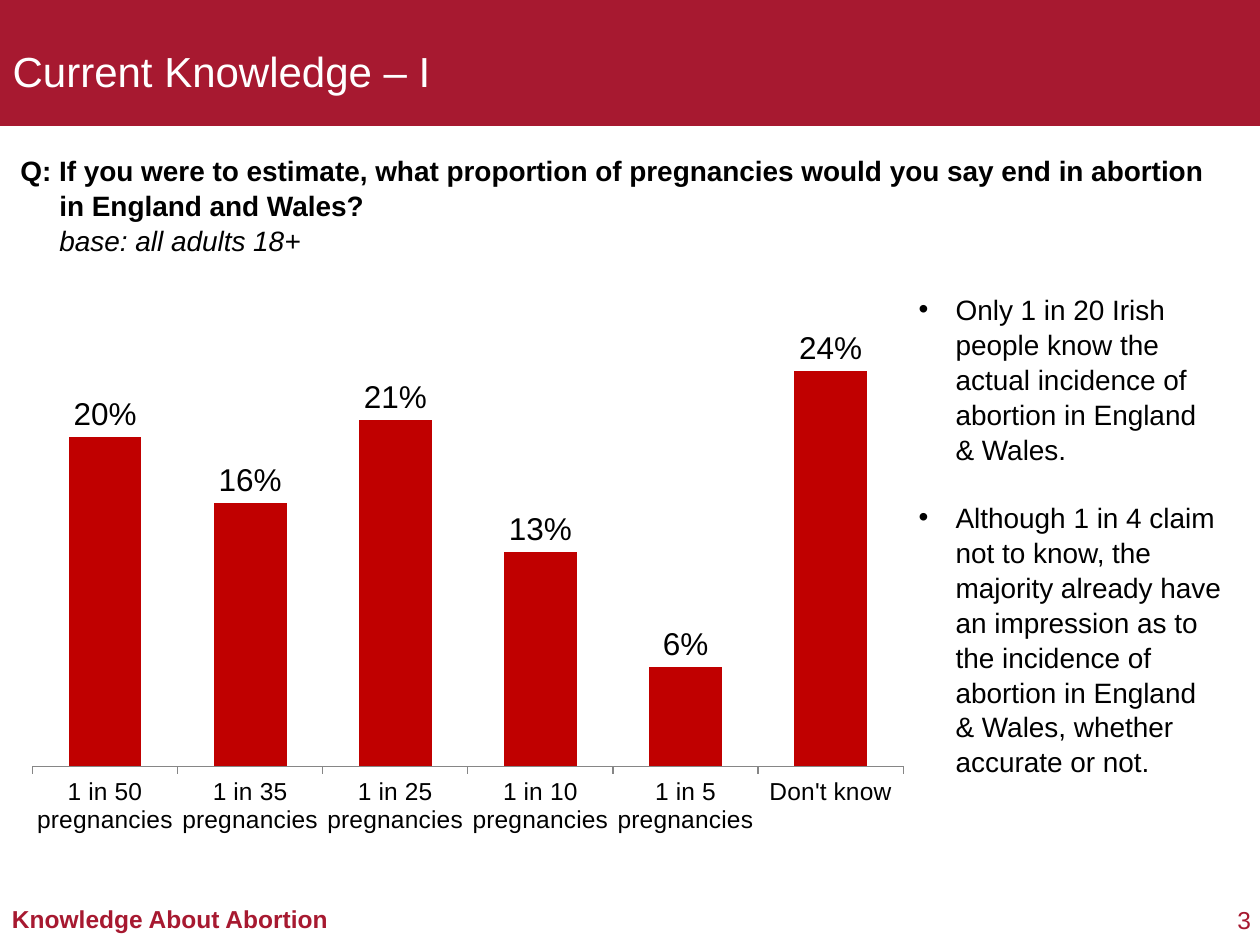
from dataclasses import dataclass

from lxml import etree
from pptx import Presentation
from pptx.chart.data import CategoryChartData
from pptx.dml.color import RGBColor
from pptx.enum.chart import XL_CHART_TYPE, XL_LABEL_POSITION, XL_TICK_MARK
from pptx.enum.shapes import MSO_SHAPE
from pptx.enum.text import MSO_ANCHOR, MSO_AUTO_SIZE, PP_ALIGN
from pptx.oxml import parse_xml
from pptx.oxml.ns import nsdecls, qn
from pptx.util import Emu, Pt

COLUMNS = XL_CHART_TYPE.COLUMN_CLUSTERED
LABEL_ABOVE = XL_LABEL_POSITION.OUTSIDE_END
TICK_OUTSIDE = XL_TICK_MARK.OUTSIDE
RECTANGLE = MSO_SHAPE.RECTANGLE
TOP, MIDDLE = MSO_ANCHOR.TOP, MSO_ANCHOR.MIDDLE
NO_AUTOFIT = MSO_AUTO_SIZE.NONE
LEFT, RIGHT = PP_ALIGN.LEFT, PP_ALIGN.RIGHT


@dataclass(frozen=True)
class Theme:
    """Colours and type sizes of the slide."""
    font: str = "Arial"
    brand: RGBColor = RGBColor(0xA7, 0x19, 0x30)
    bar: RGBColor = RGBColor(0xC0, 0x00, 0x00)
    axis: RGBColor = RGBColor(0x86, 0x86, 0x86)
    ink: RGBColor = RGBColor(0, 0, 0)
    paper: RGBColor = RGBColor(255, 255, 255)
    title: int = 24
    body: int = 16
    value: int = 18
    small: int = 14
    leading: float = 1.04


THEME = Theme()
ANSWERS = {
    "1 in 50 pregnancies": 0.20,
    "1 in 35 pregnancies": 0.16,
    "1 in 25 pregnancies": 0.21,
    "1 in 10 pregnancies": 0.13,
    "1 in 5 pregnancies": 0.06,
    "Don't know": 0.24,
}
FINDINGS = [
    "Only 1 in 20 Irish people know the actual incidence of abortion in England & Wales.",
    "Although 1 in 4 claim not to know, the majority already have an impression as to "
    "the incidence of abortion in England & Wales, whether accurate or not.",
]
QUESTION = [
    "Q: If you were to estimate, what proportion of pregnancies would you say end in abortion",
    "in England and Wales?",
]
PLOT = {"x": 0.036, "y": 0.015, "w": 0.961, "h": 0.824}


def px(count):
    """Turn whole pixels into EMU."""
    return Emu(round(count * 914400 / 126))


def place(shape, left, top, width, height):
    """Move and size a shape in pixels."""
    shape.left, shape.top = px(left), px(top)
    shape.width, shape.height = px(width), px(height)


def style(font, size, color, bold=False):
    """Apply the theme typeface with a size and colour."""
    font.name, font.size, font.bold = THEME.font, Pt(size), bold
    font.color.rgb = color


def hang(paragraph, indent):
    """Give a paragraph a hanging indent and return its properties."""
    properties = paragraph._p.get_or_add_pPr()
    properties.set("marL", str(px(indent)))
    properties.set("indent", str(-px(indent)))
    return properties


def add_band(slide):
    """Add the header band behind the title."""
    band = slide.shapes.add_shape(RECTANGLE, 0, 0, px(1260), px(126))
    band.shadow.inherit = False
    band.fill.solid()
    band.fill.fore_color.rgb = THEME.brand
    band.line.fill.background()
    slide.shapes._spTree.insert(2, band._element)


def set_title(slide, text):
    """Fill and place the title placeholder."""
    title = slide.shapes.title
    place(title, 0, 35, 965, 72)
    frame = title.text_frame
    frame.text = text
    frame.auto_size, frame.vertical_anchor = NO_AUTOFIT, MIDDLE
    frame.paragraphs[0].alignment = LEFT
    style(frame.paragraphs[0].font, THEME.title, THEME.paper)


def add_question(slide):
    """Add the survey question with its base in italics."""
    box = slide.shapes.add_textbox(px(8), px(146), px(1252), px(115))
    box.text_frame.word_wrap = True
    paragraph = box.text_frame.paragraphs[0]
    hang(paragraph, 39)
    paragraph.line_spacing = THEME.leading
    style(paragraph.font, THEME.body, THEME.ink)
    for line in QUESTION:
        run = paragraph.add_run()
        run.text = line
        run.font.bold = True
        paragraph.add_line_break()
    base = paragraph.add_run()
    base.text = "base: all adults 18+"
    base.font.italic = True


def set_findings(slide):
    """Fill the body placeholder with bulleted findings."""
    body = slide.placeholders[1]
    place(body, 906, 285, 328, 556)
    frame = body.text_frame
    frame.text = "\n".join(FINDINGS)
    frame.auto_size, frame.vertical_anchor = NO_AUTOFIT, TOP
    for index, paragraph in enumerate(frame.paragraphs):
        properties = hang(paragraph, 37)
        etree.SubElement(properties, qn("a:buFont")).set("typeface", THEME.font)
        etree.SubElement(properties, qn("a:buChar")).set("char", "•")
        paragraph.line_spacing = THEME.leading
        paragraph.space_before = Pt(19 if index else 0)
        style(paragraph.font, THEME.body, THEME.ink)


def add_chart(slide):
    """Add the column chart of answers."""
    data = CategoryChartData(number_format="0%")
    data.categories = list(ANSWERS)
    data.add_series("Series 1", list(ANSWERS.values()))
    chart = slide.shapes.add_chart(COLUMNS, 0, px(263), px(906), px(600), data).chart
    chart.has_legend = chart.has_title = False
    style(chart.font, THEME.value, THEME.ink)

    categories, values = chart.category_axis, chart.value_axis
    categories.major_tick_mark = TICK_OUTSIDE
    categories.format.line.color.rgb = THEME.axis
    style(categories.tick_labels.font, THEME.small, THEME.ink)
    values.minimum_scale, values.maximum_scale = 0, 0.3
    values.has_major_gridlines = values.visible = False

    plot = chart.plots[0]
    plot.gap_width, plot.vary_by_categories = 100, False
    bars = plot.series[0].format.fill
    bars.solid()
    bars.fore_color.rgb = THEME.bar
    plot.has_data_labels = True
    labels = plot.data_labels
    labels.show_value, labels.position = True, LABEL_ABOVE
    labels.number_format, labels.number_format_is_linked = "0%", False
    style(labels.font, THEME.value, THEME.ink)
    fix_plot_area(chart)


def fix_plot_area(chart):
    """Pin the inner plot area to fractions of the chart."""
    area = chart._chartSpace.chart.plotArea
    for layout in area.findall(qn("c:layout")):
        area.remove(layout)
    modes = '<c:xMode val="edge"/><c:yMode val="edge"/>'
    sizes = "".join(f'<c:{side} val="{part}"/>' for side, part in PLOT.items())
    area.insert(0, parse_xml(
        f'<c:layout {nsdecls("c")}><c:manualLayout><c:layoutTarget val="inner"/>'
        f"{modes}{sizes}</c:manualLayout></c:layout>"))


def add_footer_text(slide, text, box, align, bold=False, inset=0):
    """Add one line of footer text."""
    frame = slide.shapes.add_textbox(*map(px, box)).text_frame
    frame.margin_left = frame.margin_right = px(inset)
    frame.margin_top = frame.margin_bottom = px(inset // 2)
    frame.word_wrap = False
    frame.text = text
    frame.paragraphs[0].alignment = align
    style(frame.paragraphs[0].font, THEME.small, THEME.brand, bold)


def main():
    """Build and save the slide."""
    deck = Presentation()
    deck.slide_width, deck.slide_height = px(1260), px(945)
    slide = deck.slides.add_slide(deck.slide_layouts[1])
    add_band(slide)
    set_title(slide, "Current Knowledge – I")
    add_question(slide)
    set_findings(slide)
    add_chart(slide)
    add_footer_text(slide, "Knowledge About Abortion", (0, 898, 343, 43), LEFT, True, 12)
    add_footer_text(slide, "3", (1221, 905, 30, 29), RIGHT)
    deck.save("out.pptx")


if __name__ == "__main__":
    main()
